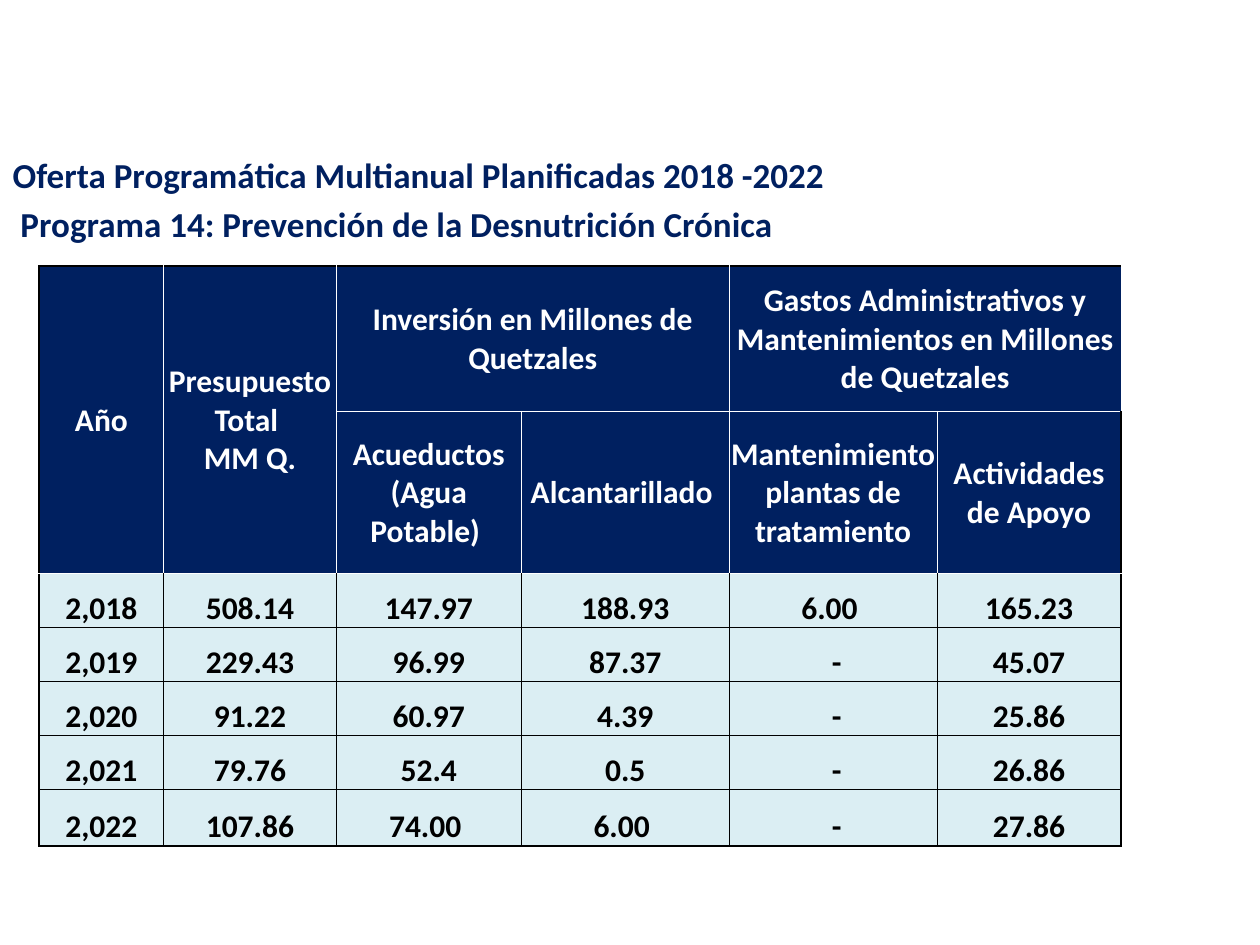
"""Builds the multi-year budget slide of Programa 14."""
from lxml import etree
from pptx import Presentation
from pptx.dml.color import RGBColor
from pptx.enum.text import MSO_ANCHOR, MSO_AUTO_SIZE, PP_ALIGN
from pptx.oxml.ns import qn
from pptx.util import Cm, Pt

NAVY = RGBColor(0x00, 0x20, 0x60)
PALE_BLUE = RGBColor(0xDB, 0xEE, 0xF3)
WHITE = RGBColor(0xFF, 0xFF, 0xFF)
BLACK = RGBColor(0x00, 0x00, 0x00)
LEFT, CENTER = PP_ALIGN.LEFT, PP_ALIGN.CENTER
TOP, MIDDLE, BOTTOM = MSO_ANCHOR.TOP, MSO_ANCHOR.MIDDLE, MSO_ANCHOR.BOTTOM
NO_AUTOFIT = MSO_AUTO_SIZE.NONE

TITLE_LINES = [
    "Oferta Programática Multianual Planificadas 2018 -2022",
    " Programa 14: Prevención de la Desnutrición Crónica",
]
COLUMN_WIDTHS = [2.51, 3.48, 3.73, 4.19, 4.19, 3.71]
ROW_HEIGHTS = [2.93, 3.27, 1.09, 1.09, 1.09, 1.09, 1.14]
HEADER_ROWS = 2
MERGES = [((0, 0), (1, 0)), ((0, 1), (1, 1)), ((0, 2), (0, 3)), ((0, 4), (0, 5))]
ROWS = [
    ["Año", "Presupuesto Total \nMM Q.", "Inversión en Millones de Quetzales", "",
     "Gastos Administrativos y Mantenimientos en Millones de Quetzales", ""],
    ["", "", "Acueductos (Agua Potable) ", "Alcantarillado ",
     "Mantenimiento plantas de tratamiento", "Actividades de Apoyo"],
    ["2,018", "508.14", "147.97", "188.93", "6.00 ", "165.23"],
    ["2,019", "229.43", "96.99", "87.37", " -", "45.07"],
    ["2,020", "91.22", "60.97", "4.39", " -", "25.86"],
    ["2,021", "79.76", "52.4", "0.5", " -", "26.86"],
    ["2,022", "107.86", "74.00 ", "6.00 ", " -", "27.86"],
]


def cell_borders(row, column):
    """Return the colour and width of each edge of a cell."""
    header = row < HEADER_ROWS
    thin = (WHITE if header else BLACK, 0.5)
    outer = (BLACK, 1)
    borders = dict.fromkeys(("lnL", "lnR", "lnT", "lnB"), thin)
    if column == 0:
        borders["lnL"] = outer
    if column == len(COLUMN_WIDTHS) - 1 and row > 0:
        borders["lnR"] = outer
    if row == 0:
        borders["lnT"] = outer
    if row == HEADER_ROWS:
        borders["lnT"] = (WHITE, 0.5)
    if row == len(ROWS) - 1:
        borders["lnB"] = outer
    return borders


class SlideBuilder:
    """Holds the text style and the current slide."""

    font_name = "Calibri"
    title_size = Pt(20)
    table_size = Pt(18)

    def __init__(self, presentation):
        self.slide = presentation.slides.add_slide(presentation.slide_layouts[5])

    def add_lines(self, frame, lines, size, color, alignment):
        for index, line in enumerate(lines):
            paragraph = frame.add_paragraph() if index else frame.paragraphs[0]
            paragraph.alignment = alignment
            run = paragraph.add_run()
            run.text = line
            run.font.name = self.font_name
            run.font.size = size
            run.font.bold = True
            run.font.color.rgb = color

    def title(self, lines, left, top, width, height):
        shape = self.slide.shapes.title
        shape.left, shape.top, shape.width, shape.height = left, top, width, height
        frame = shape.text_frame
        frame.auto_size = NO_AUTOFIT
        frame.vertical_anchor = TOP
        frame.word_wrap = True
        self.add_lines(frame, lines, self.title_size, NAVY, LEFT)
        for paragraph in frame.paragraphs[1:]:
            paragraph.space_before = Pt(4)

    def border(self, cell, edge, color, width):
        properties = cell._tc.get_or_add_tcPr()
        line = etree.SubElement(properties, qn(f"a:{edge}"), w=str(Pt(width)))
        fill = etree.SubElement(line, qn("a:solidFill"))
        etree.SubElement(fill, qn("a:srgbClr"), val=str(color))

    def cell(self, cell, text, row, column):
        header = row < HEADER_ROWS
        for edge, (color, width) in cell_borders(row, column).items():
            self.border(cell, edge, color, width)
        cell.fill.solid()
        cell.fill.fore_color.rgb = NAVY if header else PALE_BLUE
        cell.margin_left = cell.margin_right = cell.margin_top = Cm(0.03)
        cell.margin_bottom = 0
        cell.vertical_anchor = MIDDLE if header else BOTTOM
        if text:
            color = WHITE if header else BLACK
            lines = text.split("\n")
            self.add_lines(cell.text_frame, lines, self.table_size, color, CENTER)

    def table(self, rows, left, top):
        width, height = Cm(sum(COLUMN_WIDTHS)), Cm(sum(ROW_HEIGHTS))
        frame = self.slide.shapes.add_table(
            len(rows), len(COLUMN_WIDTHS), left, top, width, height)
        table = frame.table
        table.first_row = table.horz_banding = False
        for column, size in zip(table.columns, COLUMN_WIDTHS):
            column.width = Cm(size)
        for row, size in zip(table.rows, ROW_HEIGHTS):
            row.height = Cm(size)
        for first, last in MERGES:
            table.cell(*first).merge(table.cell(*last))
        for row, texts in enumerate(rows):
            for column, text in enumerate(texts):
                self.cell(table.cell(row, column), text, row, column)


def main():
    presentation = Presentation()
    presentation.slide_width, presentation.slide_height = Cm(25.4), Cm(19.05)
    builder = SlideBuilder(presentation)
    builder.table(ROWS, Cm(0.79), Cm(5.36))
    builder.title(TITLE_LINES, Cm(0), Cm(2.97), Cm(21.41), Cm(1.8))
    presentation.save("out.pptx")


if __name__ == "__main__":
    main()
